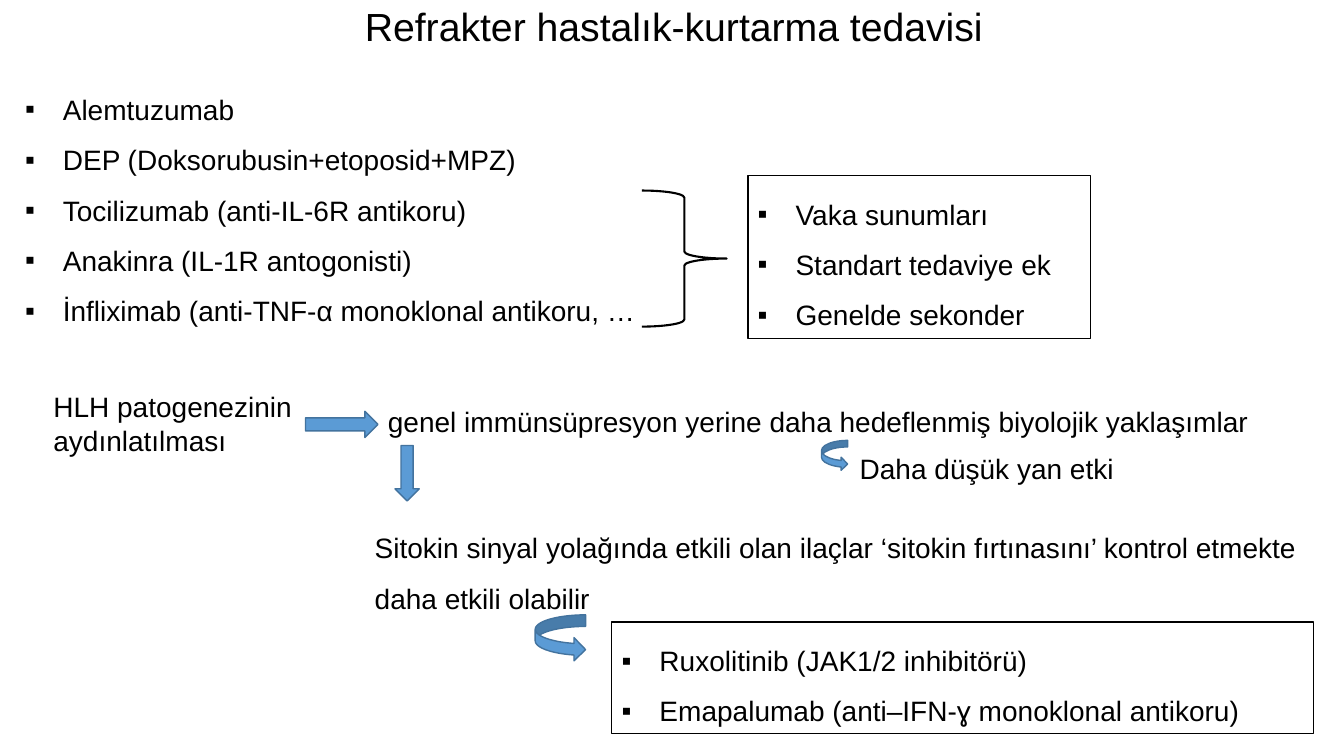
from dataclasses import dataclass

from lxml import etree
from pptx import Presentation
from pptx.dml.color import RGBColor
from pptx.enum import shapes, text
from pptx.oxml.ns import qn
from pptx.util import Pt

INK = {"text": "000000", "paper": "FFFFFF", "arrow": "5B9BD5", "edge": "43739E"}
FONT = "Arial"
INDENT = 27
KIND = shapes.MSO_SHAPE


@dataclass
class Box:
    left: float
    top: float
    width: float
    height: float

    def spot(self) -> tuple:
        return Pt(self.left), Pt(self.top), Pt(self.width), Pt(self.height)


@dataclass
class Note:
    box: Box
    lines: list[str]
    bullet: bool = False
    frame: bool = False
    gap: float = 1.0


@dataclass
class Mark:
    kind: KIND
    box: Box
    fill: str = "arrow"
    edge: str = "edge"
    weight: float = 1


TITLE = Box(24.5, -2, 913.5, 41)

NOTES = [
    Note(Box(10.8, 50.4, 607, 189.4), [
        "Alemtuzumab",
        "DEP (Doksorubusin+etoposid+MPZ)",
        "Tocilizumab (anti-IL-6R antikoru)",
        "Anakinra (IL-1R antogonisti)",
        "İnfliximab (anti-TNF-α monoklonal antikoru, …",
    ], bullet=True, gap=1.5),
    Note(Box(534.2, 125.3, 244.8, 116.6), [
        "Vaka sunumları",
        "Standart tedaviye ek",
        "Genelde sekonder",
    ], bullet=True, frame=True, gap=1.5),
    Note(Box(31, 275, 296.6, 55.4), ["HLH patogenezinin aydınlatılması"]),
    Note(Box(270, 285.1, 651.6, 31.7),
         ["genel immünsüpresyon yerine daha hedeflenmiş biyolojik yaklaşımlar"]),
    Note(Box(260.6, 363.6, 686.2, 80), [
        "Sitokin sinyal yolağında etkili olan ilaçlar ‘sitokin fırtınasını’ "
        "kontrol etmekte daha etkili olabilir",
    ], gap=1.5),
    Note(Box(437, 444.2, 501.1, 80), [
        "Ruxolitinib (JAK1/2 inhibitörü)",
        "Emapalumab (anti–IFN-ɣ monoklonal antikoru)",
    ], bullet=True, frame=True, gap=1.5),
    Note(Box(607, 319, 340, 31.7), ["Daha düşük yan etki"]),
]

MARKS = [
    Mark(KIND.RIGHT_BRACE, Box(458.6, 136.1, 60.5, 97.2), "", "text", 1.5),
    Mark(KIND.RIGHT_ARROW, Box(218.2, 293.8, 51.8, 18.7)),
    Mark(KIND.DOWN_ARROW, Box(282.2, 318.2, 17.3, 39.6)),
    Mark(KIND.CURVED_RIGHT_ARROW, Box(382.3, 439.2, 36, 33.1)),
    Mark(KIND.CURVED_RIGHT_ARROW, Box(586.8, 314.6, 18.7, 21.6)),
]


def color(name: str) -> RGBColor:
    return RGBColor.from_string(INK[name])


def add_bullet(para) -> None:
    props = para._p.get_or_add_pPr()
    props.set("marL", str(Pt(INDENT)))
    props.set("indent", str(-Pt(INDENT)))
    etree.SubElement(props, qn("a:buFont"), typeface=FONT)
    etree.SubElement(props, qn("a:buChar"), char="▪")


def write(shape, lines: list[str], *, size: float = 20, gap: float = 1.0,
          bullet: bool = False, align=text.PP_ALIGN.LEFT) -> None:
    frame = shape.text_frame
    frame.word_wrap = True
    frame.auto_size = text.MSO_AUTO_SIZE.NONE
    frame.vertical_anchor = text.MSO_ANCHOR.TOP
    for i, line in enumerate(lines):
        para = frame.add_paragraph() if i else frame.paragraphs[0]
        para.alignment = align
        para.line_spacing = gap
        if bullet:
            add_bullet(para)
        run = para.add_run()
        run.text = line
        run.font.name = FONT
        run.font.size = Pt(size)
        run.font.color.rgb = color("text")


def draw_mark(slide, mark: Mark):
    shape = slide.shapes.add_shape(mark.kind, *mark.box.spot())
    shape.shadow.inherit = False
    if mark.fill:
        shape.fill.solid()
        shape.fill.fore_color.rgb = color(mark.fill)
    else:
        shape.fill.background()
    shape.line.color.rgb = color(mark.edge)
    shape.line.width = Pt(mark.weight)
    return shape


def draw_note(slide, note: Note) -> None:
    if note.frame:
        shape = draw_mark(slide, Mark(KIND.RECTANGLE, note.box, "paper", "text"))
    else:
        shape = slide.shapes.add_textbox(*note.box.spot())
    write(shape, note.lines, gap=note.gap, bullet=note.bullet)


def main() -> None:
    deck = Presentation()
    deck.slide_width, deck.slide_height = Pt(960), Pt(540)
    slide = deck.slides.add_slide(deck.slide_layouts.get_by_name("Title Only"))
    title = slide.shapes.title
    title.left, title.top, title.width, title.height = TITLE.spot()
    write(title, ["Refrakter hastalık-kurtarma tedavisi"], size=28,
          align=text.PP_ALIGN.CENTER)
    for note in NOTES:
        draw_note(slide, note)
    for mark in MARKS:
        draw_mark(slide, mark)
    deck.save("out.pptx")


if __name__ == "__main__":
    main()
